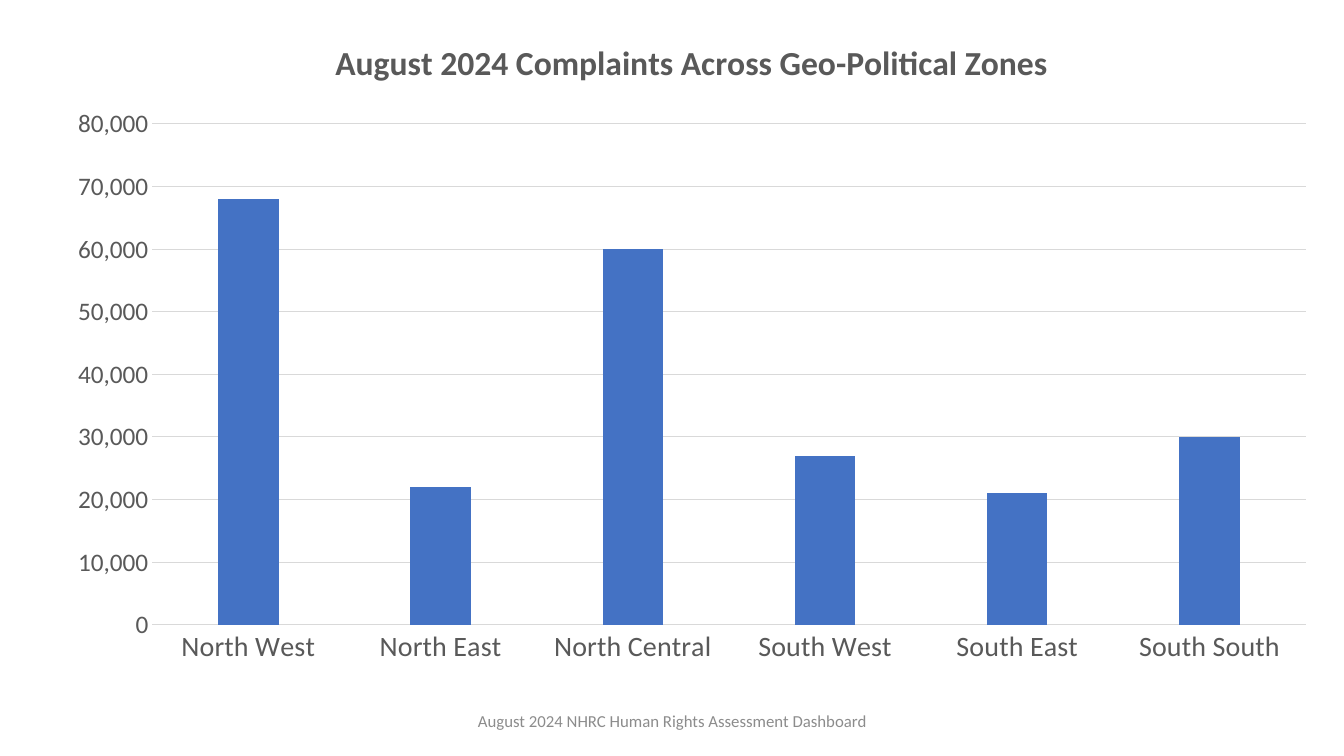
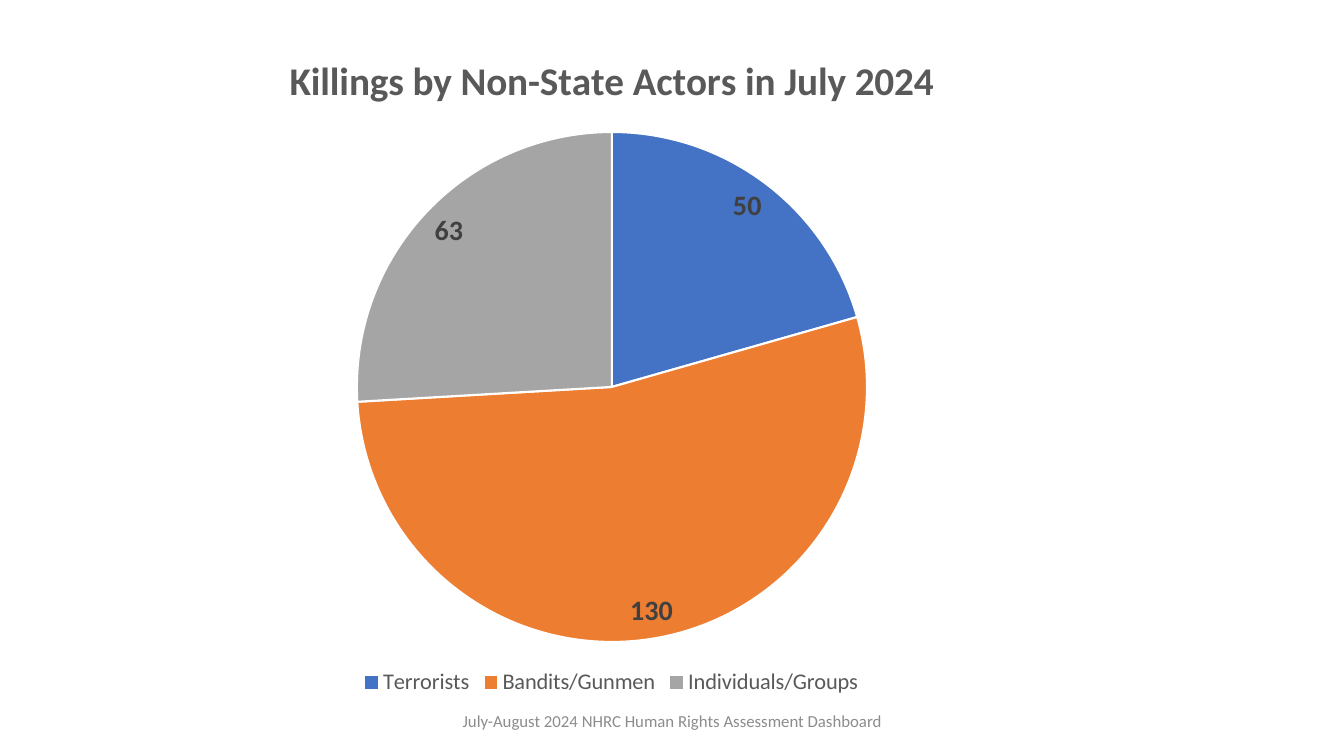
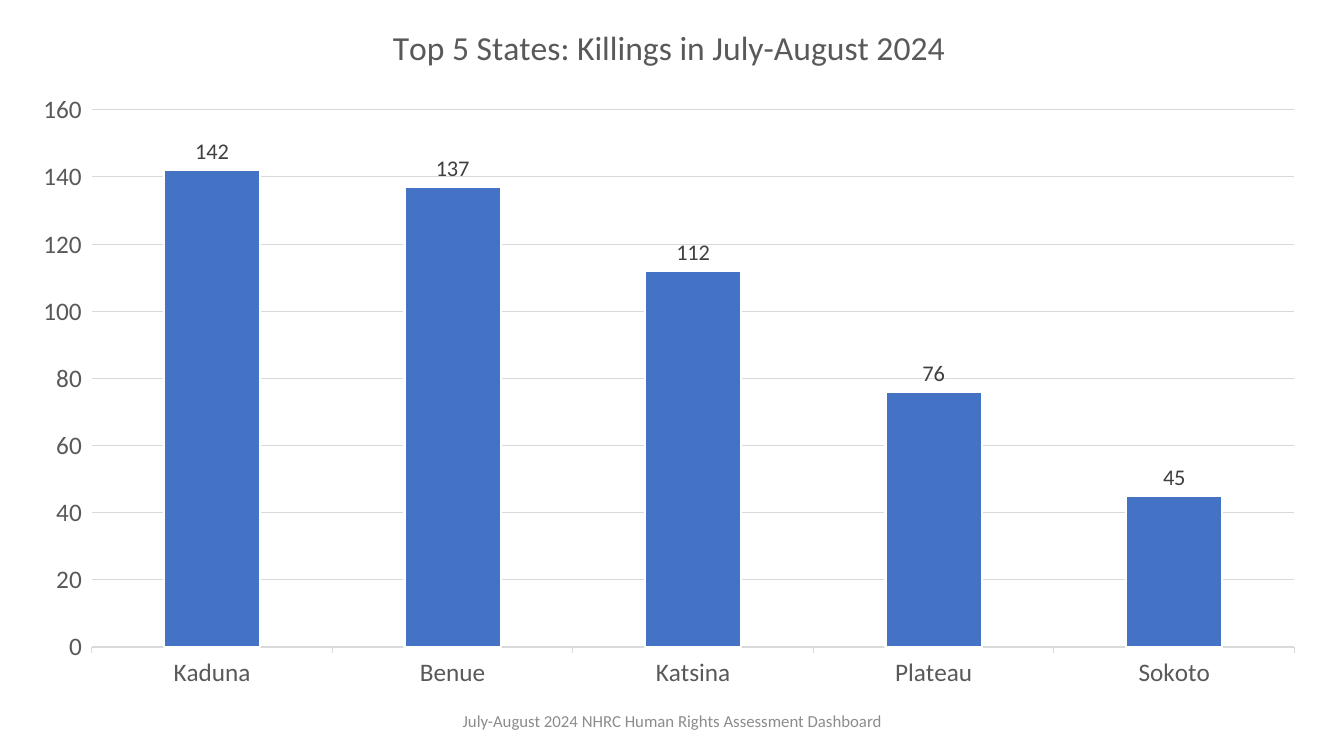
"""Build three chart slides of a human rights assessment dashboard."""
from lxml import etree
from pptx import Presentation
from pptx.chart.data import CategoryChartData
from pptx.dml.color import RGBColor
from pptx.enum.chart import XL_CHART_TYPE, XL_LABEL_POSITION, XL_LEGEND_POSITION, XL_TICK_MARK
from pptx.enum.text import MSO_ANCHOR, PP_ALIGN
from pptx.oxml.ns import qn
from pptx.util import Inches, Pt

FONT = "Calibri"
BLUE, ORANGE, GRAY = "4472C4", "ED7D31", "A5A5A5"
INK, DARK, PALE, GRID, WHITE = "595959", "404040", "8C8C8C", "D9D9D9", "FFFFFF"
FOOTER = "{} 2024 NHRC Human Rights Assessment Dashboard"

SLIDES = [
    dict(kind=XL_CHART_TYPE.COLUMN_CLUSTERED, period="August",
         title="August 2024 Complaints Across Geo-Political Zones", size=24, bold=True,
         data={"North West": 68000, "North East": 22000, "North Central": 60000,
               "South West": 27000, "South East": 21000, "South South": 30000},
         box=(0.52, 0.15, 12.68, 6.56), plot=(1.51, 1.23, 11.44, 4.97),
         gap=219, overlap=-27, top=80000, step=10000, form="#,##0",
         cat_size=20, tick=XL_TICK_MARK.NONE),
    dict(kind=XL_CHART_TYPE.PIE, period="July-August",
         title="Killings by Non-State Actors in July 2024", size=28, bold=True,
         data={"Terrorists": 50, "Bandits/Gunmen": 130, "Individuals/Groups": 63},
         box=(0.1, 0.28, 11.93, 6.67), plot=(3.54, 1.31, 5.06, 5.06),
         labels=(20, True, XL_LABEL_POSITION.BEST_FIT)),
    dict(kind=XL_CHART_TYPE.COLUMN_CLUSTERED, period="July-August",
         title="Top 5 States: Killings in July-August 2024", size=24, bold=False,
         data={"Kaduna": 142, "Benue": 137, "Katsina": 112, "Plateau": 76, "Sokoto": 45},
         box=(0.18, 0, 12.91, 6.95), plot=(0.91, 1.09, 11.93, 5.33),
         gap=150, overlap=0, top=160, step=20, form="0",
         cat_size=18, tick=XL_TICK_MARK.OUTSIDE, edge=1.5,
         labels=(16, False, XL_LABEL_POSITION.OUTSIDE_END)),
]


def color(code):
    return RGBColor.from_string(code)


def style(font, size, code, bold=False):
    font.name, font.size, font.bold = FONT, Pt(size), bold
    font.color.rgb = color(code)


def fill(part, code):
    part.format.fill.solid()
    part.format.fill.fore_color.rgb = color(code)


def stroke(line, code, width):
    line.color.rgb = color(code)
    line.width = Pt(width)


def add_footer(slide, period):
    box = slide.shapes.add_textbox(Inches(4.42), Inches(6.95), Inches(4.5), Inches(0.4))
    frame = box.text_frame
    frame.word_wrap = True
    frame.vertical_anchor = MSO_ANCHOR.MIDDLE
    para = frame.paragraphs[0]
    para.text = FOOTER.format(period)
    para.alignment = PP_ALIGN.CENTER
    style(para.font, 12, PALE)


def place_plot(chart, box, plot):
    area = chart._chartSpace.chart.plotArea
    for old in area.findall(qn("c:layout")):
        area.remove(old)
    layout = etree.Element(qn("c:layout"))
    manual = etree.SubElement(layout, qn("c:manualLayout"))
    left, top, width, height = box
    values = {"layoutTarget": "inner", "xMode": "edge", "yMode": "edge",
              "x": (plot[0] - left) / width, "y": (plot[1] - top) / height,
              "w": plot[2] / width, "h": plot[3] / height}
    for name, value in values.items():
        etree.SubElement(manual, qn("c:" + name)).set("val", str(value))
    area.insert(0, layout)


def style_bars(chart, item):
    bars = chart.plots[0]
    bars.gap_width, bars.overlap = item["gap"], item["overlap"]
    series = bars.series[0]
    fill(series, BLUE)
    if "edge" in item:
        stroke(series.format.line, WHITE, item["edge"])
    cats, vals = chart.category_axis, chart.value_axis
    for axis, size in ((cats, item["cat_size"]), (vals, 18)):
        style(axis.tick_labels.font, size, INK)
        axis.major_tick_mark = item["tick"]
        axis.minor_tick_mark = XL_TICK_MARK.NONE
    stroke(cats.format.line, GRID, 0.75)
    vals.format.line.fill.background()
    stroke(vals.major_gridlines.format.line, GRID, 0.75)
    vals.minimum_scale, vals.maximum_scale = 0, item["top"]
    vals.major_unit = item["step"]
    vals.tick_labels.number_format = item["form"]
    vals.tick_labels.number_format_is_linked = False


def style_pie(chart):
    series = chart.plots[0].series[0]
    for index, code in enumerate((BLUE, ORANGE, GRAY)):
        point = series.points[index]
        fill(point, code)
        stroke(point.format.line, WHITE, 1.5)
    chart.has_legend = True
    chart.legend.position = XL_LEGEND_POSITION.BOTTOM
    chart.legend.include_in_layout = False
    style(chart.legend.font, 16, INK)


def add_chart(slide, item):
    data = CategoryChartData()
    data.categories = list(item["data"])
    data.add_series("Series 1", list(item["data"].values()))
    frame = slide.shapes.add_chart(item["kind"], *map(Inches, item["box"]), data)
    chart = frame.chart
    style(chart.font, 10, "000000")
    chart.has_legend = False
    chart.has_title = True
    para = chart.chart_title.text_frame.paragraphs[0]
    para.text = item["title"]
    style(para.font, item["size"], INK, item["bold"])
    chart.chart_title.include_in_layout = False
    pie = item["kind"] == XL_CHART_TYPE.PIE
    chart.plots[0].vary_by_categories = pie
    if pie:
        style_pie(chart)
    else:
        style_bars(chart, item)
    if "labels" in item:
        size, bold, spot = item["labels"]
        labels = chart.plots[0].series[0].data_labels
        labels.show_value = True
        labels.position = spot
        style(labels.font, size, DARK, bold)
    place_plot(chart, item["box"], item["plot"])


def main():
    deck = Presentation()
    deck.slide_width, deck.slide_height = Inches(13.33), Inches(7.5)
    for item in SLIDES:
        slide = deck.slides.add_slide(deck.slide_layouts[6])
        add_footer(slide, item["period"])
        add_chart(slide, item)
    deck.save("out.pptx")


if __name__ == "__main__":
    main()
